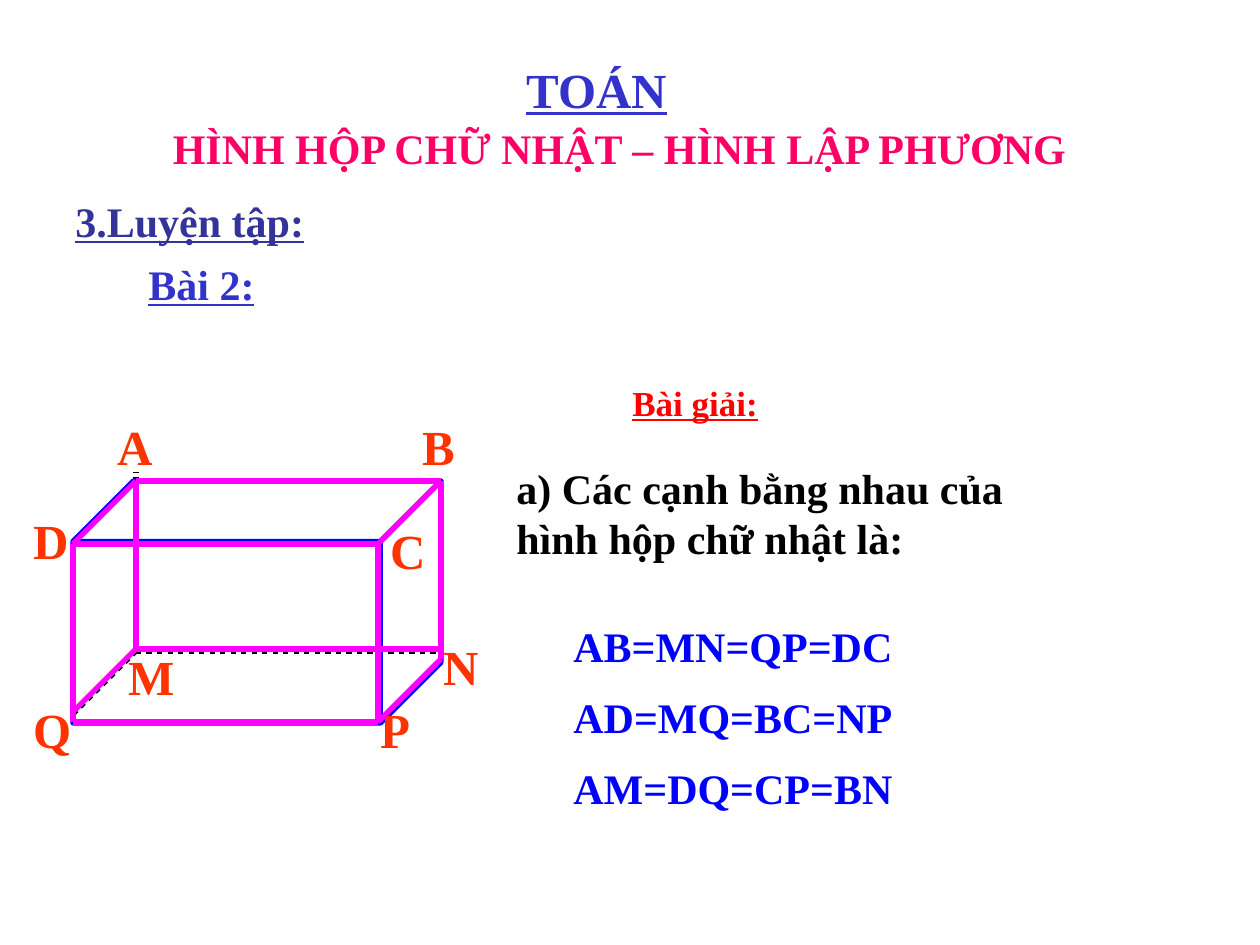
from lxml import etree
from pptx import Presentation
from pptx.dml.color import RGBColor
from pptx.enum.dml import MSO_LINE
from pptx.enum.shapes import MSO_CONNECTOR, MSO_SHAPE
from pptx.enum.text import MSO_AUTO_SIZE, PP_ALIGN
from pptx.oxml.ns import qn
from pptx.util import Pt

PX = 914400 // 126
FONT = "Times New Roman"
LEFT, CENTER = PP_ALIGN.LEFT, PP_ALIGN.CENTER
FIT_SHAPE = MSO_AUTO_SIZE.SHAPE_TO_FIT_TEXT
STRAIGHT = MSO_CONNECTOR.STRAIGHT
CUBE = MSO_SHAPE.CUBE
DOTTED = MSO_LINE.ROUND_DOT

BLACK = RGBColor(0x00, 0x00, 0x00)
RED = RGBColor(0xFF, 0x00, 0x00)
BLUE = RGBColor(0x00, 0x00, 0xFF)
MAGENTA = RGBColor(0xFF, 0x00, 0xFF)
ORANGE = RGBColor(0xFF, 0x33, 0x00)
PINK = RGBColor(0xFF, 0x00, 0x66)
INDIGO = RGBColor(0x33, 0x33, 0x99)
VIOLET = RGBColor(0x33, 0x33, 0xCC)

presentation = Presentation()
presentation.slide_width = 1260 * PX
presentation.slide_height = 945 * PX
slide = presentation.slides.add_slide(presentation.slide_layouts[6])


def add_text(lines, left, top, width, height, size, color, underline=False, align=LEFT):
    """Add a bold text box; each paragraph has half a line of space before it."""
    box = slide.shapes.add_textbox(left * PX, top * PX, width * PX, height * PX)
    frame = box.text_frame
    frame.word_wrap = True
    frame.auto_size = FIT_SHAPE
    frame.text = "\n".join(lines)
    for paragraph in frame.paragraphs:
        paragraph.alignment = align
        font = paragraph.font
        font.name, font.size, font.bold = FONT, Pt(size), True
        font.underline = underline
        font.color.rgb = color
        properties = paragraph._p.get_or_add_pPr()
        space_before = etree.Element(qn("a:spcBef"))
        etree.SubElement(space_before, qn("a:spcPct"), val="50000")
        properties.insert(0, space_before)


def add_edge(start, end, color, dash=None):
    x1, y1 = start
    x2, y2 = end
    edge = slide.shapes.add_connector(STRAIGHT, x1 * PX, y1 * PX, x2 * PX, y2 * PX)
    edge.line.color.rgb = color
    edge.line.width = Pt(3)
    if dash:
        edge.line.dash_style = dash
    etree.SubElement(edge._element.spPr, qn("a:effectLst"))


# Solution
add_text(["Bài giải:"], 620, 375, 252, 55, 20, RED, underline=True)
add_text(["a) Các cạnh bằng nhau của hình hộp chữ nhật là:"], 504, 456, 564, 115, 24, BLACK)
add_text(["AB=MN=QP=DC", "AD=MQ=BC=NP", "AM=DQ=CP=BN"], 561, 614, 636, 217, 24, BLUE)

# Box with its hidden edges
hidden_corner = (136, 651)
for end in [(441, 651), (136, 472), (73, 714)]:
    add_edge(hidden_corner, end, BLACK, DOTTED)

cuboid = slide.shapes.add_shape(CUBE, 73 * PX, 481 * PX, 368 * PX, 242 * PX)
cuboid.adjustments[0] = 0.25
cuboid.fill.background()
cuboid.line.color.rgb = BLUE
cuboid.line.width = Pt(3)
cuboid.shadow.inherit = False

# Corner labels: name, left, top, width
corner_labels = [
    ("A", 105, 410, 73),
    ("B", 410, 410, 73),
    ("N", 431, 630, 73),
    ("Q", 21, 693, 73),
    ("M", 116, 640, 73),
    ("P", 368, 693, 73),
    ("D", 21, 504, 73),
    ("C", 378, 514, 53),
]
for name, left, top, width in corner_labels:
    add_text([name], left, top, width, 72, 28, ORANGE)

# Highlighted edges
A, B, C, D = (136, 481), (441, 481), (378, 544), (73, 544)
M, N, P, Q = (136, 649), (441, 659), (378, 722), (73, 722)
edges = [
    (A, B), (M, (441, 649)), (Q, P), (D, C),
    (A, D), (M, (73, 712)), (B, C), (N, P),
    (A, M), (D, Q), (C, P), (B, N),
]
for start, end in edges:
    add_edge(start, end, MAGENTA)

# Headings
add_text(["3.Luyện tập:"], 63, 189, 756, 64, 24, INDIGO, underline=True)
add_text(["Bài 2:"], 136, 252, 399, 64, 24, VIOLET, underline=True)
add_text(["TOÁN"], 514, 53, 210, 72, 28, VIOLET, underline=True)
add_text(["HÌNH HỘP CHỮ NHẬT – HÌNH LẬP PHƯƠNG"], 147, 116, 945, 64, 24, PINK, align=CENTER)

presentation.save("out.pptx")
